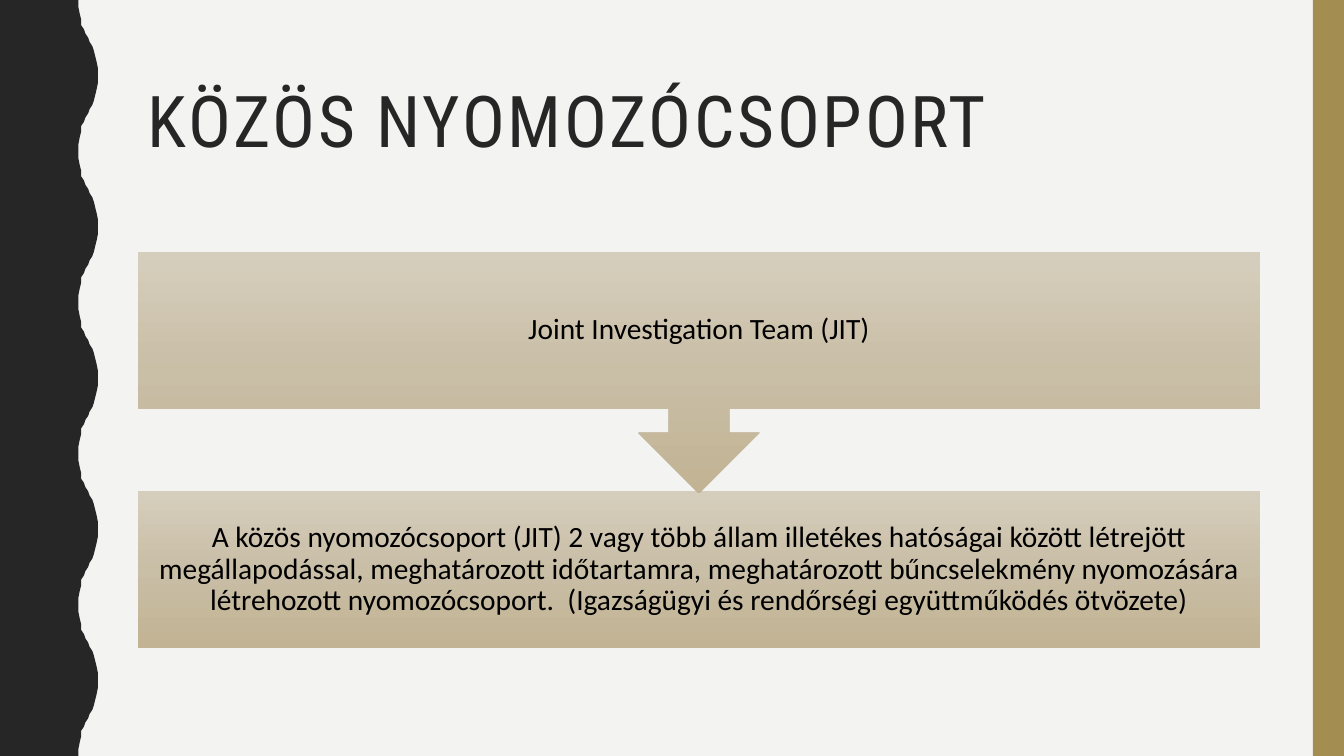
import copy

import pptx
import pptx.dml.color
import pptx.enum.shapes
import pptx.enum.text
import pptx.util

Pt = pptx.util.Pt
RGBColor = pptx.dml.color.RGBColor
MSO_SHAPE = pptx.enum.shapes.MSO_SHAPE
PP_ALIGN = pptx.enum.text.PP_ALIGN

TITLE = "KÖZÖS NYOMOZÓCSOPORT"
TERM = "Joint Investigation Team (JIT)"
DEFINITION = (
    "A közös nyomozócsoport (JIT) 2 vagy több állam illetékes hatóságai között "
    "létrejött megállapodással, meghatározott időtartamra, meghatározott "
    "bűncselekmény nyomozására létrehozott nyomozócsoport.  "
    "(Igazságügyi és rendőrségi együttműködés ötvözete)"
)

PAPER = RGBColor(0xF3, 0xF3, 0xF2)
INK = RGBColor(0x26, 0x26, 0x26)
GOLD = RGBColor(0xA3, 0x8D, 0x51)
BLACK = RGBColor(0, 0, 0)
SAND = [RGBColor(0xD6, 0xCE, 0xBD), RGBColor(0xC9, 0xBE, 0xA6), RGBColor(0xC1, 0xB3, 0x93)]

WIDTH, HEIGHT = 960, 540
LEFT, CONTENT_WIDTH = 98.5, 801.5
STRIPE_WIDTH = 22.3
# Edge of the wave from trough to crest, as (x, y); mirrored for the way back.
WAVE_RISE = [
    (56, 0), (56.2, 5), (56.9, 10), (57.6, 14.4), (58.5, 18), (59.8, 21),
    (61.2, 24), (62.6, 27), (64.1, 30), (65.5, 33), (67, 36), (68.4, 39.6),
    (69.1, 44), (69.8, 49), (70, 54),
]
WAVE_PERIOD = 108
# Preset, top, height, text
STEPS = [
    (MSO_SHAPE.RECTANGLE, 350.8, 112, DEFINITION),
    (MSO_SHAPE.DOWN_ARROW_CALLOUT, 180, 172.4, TERM),
]


def finish(shape, color):
    shape.shadow.inherit = False
    shape.line.fill.background()
    shape.fill.solid()
    shape.fill.fore_color.rgb = color


def fill_sand(shape):
    """Fill with the three-stop gradient, light at the top."""
    shape.fill.gradient()
    shape.fill.gradient_angle = 270
    stop_list = shape.fill.gradient_stops[0]._gs.getparent()
    stop_list.insert(1, copy.deepcopy(stop_list[0]))
    for index, (stop, color) in enumerate(zip(shape.fill.gradient_stops, SAND)):
        stop.color.rgb = color
        stop.position = index / 2


def write(frame, text, font, size, color, align):
    frame.word_wrap = True
    frame.vertical_anchor = pptx.enum.text.MSO_ANCHOR.MIDDLE
    paragraph = frame.paragraphs[0]
    paragraph.alignment = align
    paragraph.line_spacing = 0.9
    run = paragraph.add_run()
    run.text = text
    run.font.name = font
    run.font.size = Pt(size)
    run.font.color.rgb = color
    return run


def add_wave(slide):
    period = WAVE_RISE + [(x, WAVE_PERIOD - y) for x, y in WAVE_RISE[-2:0:-1]]
    edge = [(x, y + start) for start in range(0, HEIGHT, WAVE_PERIOD) for x, y in period]
    outline = edge + [(WAVE_RISE[0][0], HEIGHT), (0, HEIGHT)]
    builder = slide.shapes.build_freeform(0, 0, scale=Pt(1))
    builder.add_line_segments(outline, close=True)
    finish(builder.convert_to_shape(), INK)


def main():
    deck = pptx.Presentation()
    deck.slide_width, deck.slide_height = Pt(WIDTH), Pt(HEIGHT)
    slide = deck.slides.add_slide(deck.slide_layouts[6])
    slide.background.fill.solid()
    slide.background.fill.fore_color.rgb = PAPER

    add_wave(slide)
    stripe = slide.shapes.add_shape(
        MSO_SHAPE.RECTANGLE, Pt(WIDTH - STRIPE_WIDTH), 0, Pt(STRIPE_WIDTH), Pt(HEIGHT))
    finish(stripe, GOLD)

    title = slide.shapes.add_textbox(Pt(LEFT), Pt(30), Pt(CONTENT_WIDTH), Pt(117.5))
    heading = write(title.text_frame, TITLE, "Roboto Condensed", 51, INK, PP_ALIGN.LEFT)
    heading.font._element.set("spc", "200")

    for preset, top, height, text in STEPS:
        step = slide.shapes.add_shape(preset, Pt(LEFT), Pt(top), Pt(CONTENT_WIDTH), Pt(height))
        finish(step, SAND[0])
        fill_sand(step)
        frame = step.text_frame
        frame.margin_left = frame.margin_right = Pt(11.5)
        frame.margin_top = frame.margin_bottom = Pt(11.5)
        write(frame, text, "Calibri", 21, BLACK, PP_ALIGN.CENTER)

    deck.save("out.pptx")


if __name__ == "__main__":
    main()
